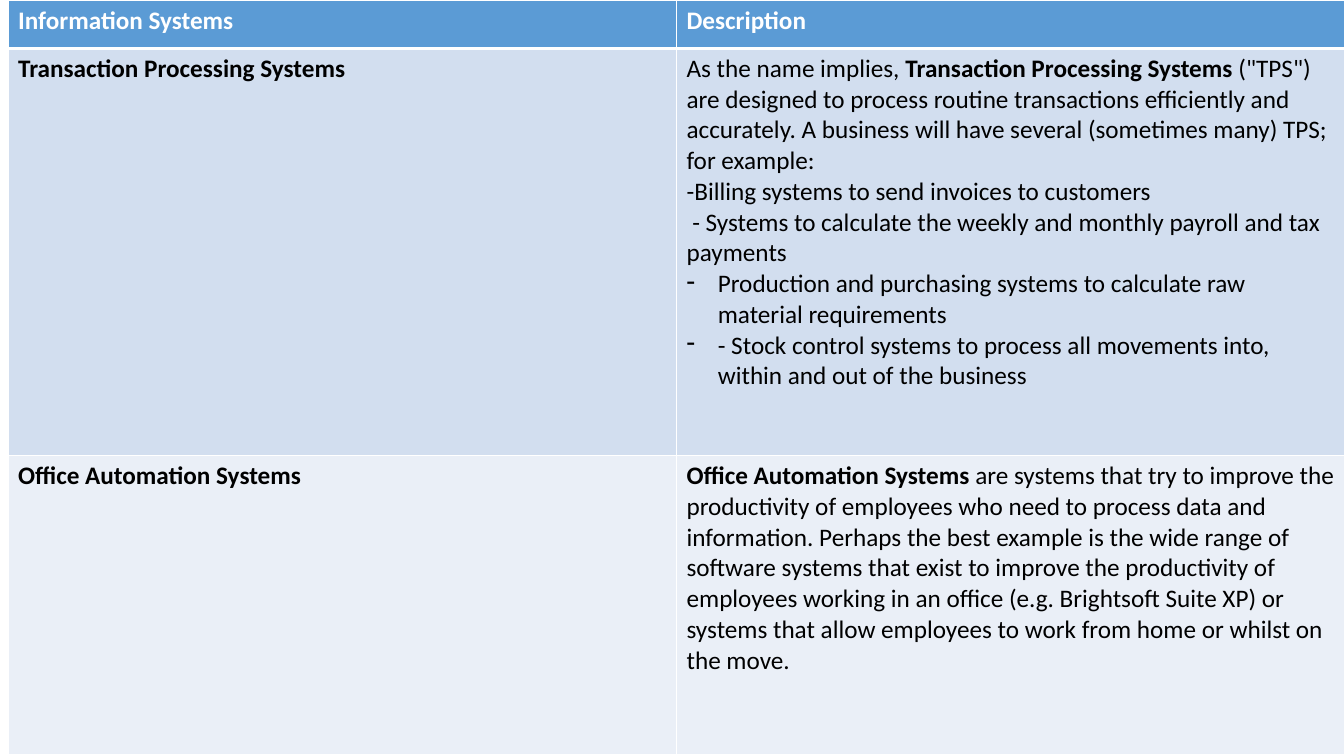
from lxml.etree import SubElement
from pptx import Presentation
from pptx.dml.color import RGBColor
from pptx.oxml.ns import qn
from pptx.util import Inches, Pt

THEME = {
    "font": "Calibri", "size": 18,
    "head": "5B9BD5", "bands": ["D2DEEF", "EAEFF7"],
    "light": "FFFFFF", "dark": "000000",
    "thin": 1, "thick": 3,
}
SLIDE = (13.33, 7.5)
LEFT, TOP = 0.08, 0
COLS = [6.63, 6.63]
ROWS = [0.48, 4.04, 2.97]
INDENT = 0.31
BOLD, PLAIN, DASH = "bold", "plain", "dash"

HEADS = ["Information Systems", "Description"]
SYSTEMS = [
    ("Transaction Processing Systems", [
        (PLAIN, [
            ("As the name implies, ", PLAIN),
            ("Transaction Processing Systems ", BOLD),
            ('("TPS") are designed to process routine transactions efficiently '
             "and accurately. A business will have several (sometimes many) TPS; "
             "for example:", PLAIN),
        ]),
        (PLAIN, [("-Billing systems to send invoices to customers", PLAIN)]),
        (PLAIN, [(" - Systems to calculate the weekly and monthly payroll "
                  "and tax payments", PLAIN)]),
        (DASH, [("Production and purchasing systems to calculate raw "
                 "material requirements", PLAIN)]),
        (DASH, [("- Stock control systems to process all movements into, "
                 "within and out of the business", PLAIN)]),
    ]),
    ("Office Automation Systems", [
        (PLAIN, [
            ("Office Automation Systems ", BOLD),
            ("are systems that try to improve the productivity of employees "
             "who need to process data and information. Perhaps the best "
             "example is the wide range of software systems that exist to "
             "improve the productivity of employees working in an office "
             "(e.g. Brightsoft Suite XP) or systems that allow employees to "
             "work from home or whilst on the move.", PLAIN),
        ]),
    ]),
]


def title(text):
    return [(PLAIN, [(text, BOLD)])]


def add_dash(para):
    props = para._p.get_or_add_pPr()
    props.set("marL", str(Inches(INDENT)))
    props.set("indent", str(-Inches(INDENT)))
    SubElement(props, qn("a:buChar"), char="-")


def write(cell, paras, color):
    frame = cell.text_frame
    for index, (kind, runs) in enumerate(paras):
        para = frame.add_paragraph() if index else frame.paragraphs[0]
        if kind == DASH:
            add_dash(para)
        for text, weight in runs:
            run = para.add_run()
            run.text = text
            run.font.name = THEME["font"]
            run.font.size = Pt(THEME["size"])
            run.font.bold = weight == BOLD
            run.font.color.rgb = RGBColor.from_string(color)


def paint(cell, fill, above, below):
    props = cell._tc.get_or_add_tcPr()
    widths = {"L": THEME["thin"], "R": THEME["thin"], "T": above, "B": below}
    for side, width in widths.items():
        line = SubElement(props, qn(f"a:ln{side}"), w=str(Pt(width)))
        solid = SubElement(line, qn("a:solidFill"))
        SubElement(solid, qn("a:srgbClr"), val=THEME["light"])
    cell.fill.solid()
    cell.fill.fore_color.rgb = RGBColor.from_string(fill)


def main():
    deck = Presentation()
    deck.slide_width, deck.slide_height = map(Inches, SLIDE)
    slide = deck.slides.add_slide(deck.slide_layouts[6])
    frame = slide.shapes.add_table(
        len(ROWS), len(COLS), Inches(LEFT), Inches(TOP),
        Inches(sum(COLS)), Inches(sum(ROWS)))
    table = frame.table
    for col, width in zip(table.columns, COLS):
        col.width = Inches(width)
    for row, height in zip(table.rows, ROWS):
        row.height = Inches(height)

    grid = [[title(text) for text in HEADS]]
    grid += [[title(name), about] for name, about in SYSTEMS]
    thin, thick = THEME["thin"], THEME["thick"]
    for r, line in enumerate(grid):
        fill = THEME["bands"][(r - 1) % 2] if r else THEME["head"]
        color = THEME["dark"] if r else THEME["light"]
        above = thick if r == 1 else thin
        below = thin if r else thick
        for c, paras in enumerate(line):
            cell = table.cell(r, c)
            write(cell, paras, color)
            paint(cell, fill, above, below)
    deck.save("out.pptx")


if __name__ == "__main__":
    main()
